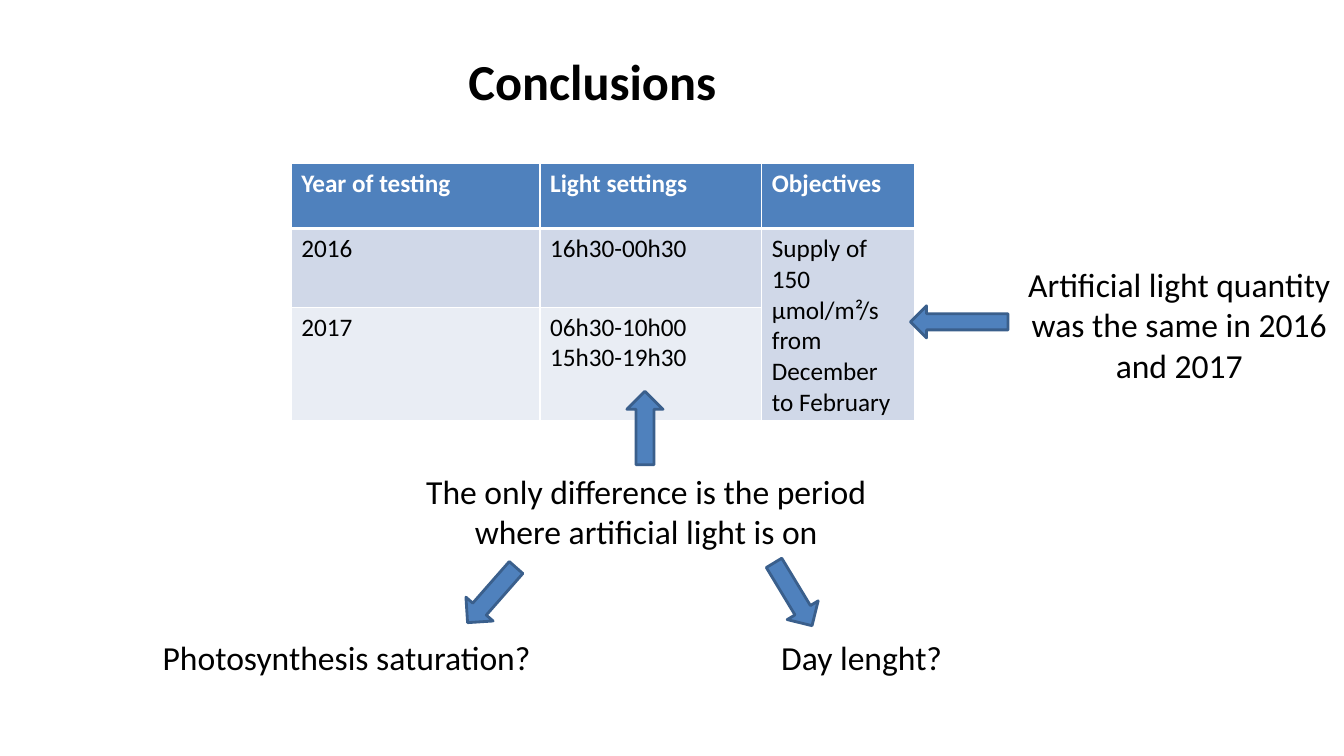
from lxml.etree import SubElement
from pptx import Presentation
from pptx.dml.color import RGBColor
from pptx.enum.shapes import MSO_SHAPE as Shape
from pptx.enum.text import MSO_ANCHOR as Anchor, MSO_AUTO_SIZE as AutoSize, PP_ALIGN as Align
from pptx.oxml.ns import qn
from pptx.util import Cm, Pt

FONT = "Calibri"
BLACK, WHITE, BLUE, NAVY = "000000", "FFFFFF", "4F81BD", "3A5F8C"
ROW_FILLS = [BLUE, "D0D8E8", "E9EDF4"]
COLUMN_WIDTHS = [6.27, 5.59, 3.86]
ROW_HEIGHTS = [1.65, 1.98, 2.36]
ROWS = [
    [["Year of testing"], ["Light settings"], ["Objectives"]],
    [["2016"], ["16h30-00h30"], ["Supply of 150 µmol/m²/s from December to February"]],
    [["2017"], ["06h30-10h00", "15h30-19h30"], []],
]
STATEMENTS = [
    ("Artificial light quantity was the same in 2016 and 2017", 25.53, 6.53, 8.38, 3.33),
    ("The only difference is the period where artificial light is on", 10.29, 11.73, 11.99, 2.31),
    ("Photosynthesis saturation?", 2.74, 15.93, 11.99, 1.27),
    ("Day lenght?", 15.72, 15.93, 11.99, 1.27),
]
ARROWS = [
    (15.8, 9.86, 0.91, 1.85, 0),
    (23.77, 6.88, 0.81, 2.46, 270),
    (11.94, 14.07, 0.91, 1.85, 221.3),
    (19.53, 14.05, 0.91, 1.85, 148.8),
]


def paint(target, color):
    """Give a fill one solid colour."""
    target.solid()
    target.fore_color.rgb = RGBColor.from_string(color)


def add_span(para, text, size, color=BLACK, bold=False):
    """Add one formatted run to a paragraph."""
    span = para.add_run()
    span.text = text
    span.font.name = FONT
    span.font.size = Pt(size)
    span.font.bold = bold
    span.font.color.rgb = RGBColor.from_string(color)


def add_text(page, text, left, top, width, height, size=24, bold=False):
    """Add a centred, wrapping text box and return its frame."""
    box = page.shapes.add_textbox(Cm(left), Cm(top), Cm(width), Cm(height))
    frame = box.text_frame
    frame.word_wrap = True
    para = frame.paragraphs[0]
    para.alignment = Align.CENTER
    add_span(para, text, size, bold=bold)
    return frame


def add_arrow(page, left, top, width, height, rotation):
    """Add a block arrow turned clockwise from pointing up."""
    arrow = page.shapes.add_shape(Shape.UP_ARROW, Cm(left), Cm(top), Cm(width), Cm(height))
    arrow.rotation = rotation
    arrow.shadow.inherit = False
    paint(arrow.fill, BLUE)
    paint(arrow.line.fill, NAVY)
    arrow.line.width = Pt(2)


def add_borders(cell, top, bottom):
    """Draw white borders around a cell, with widths in points."""
    properties = cell._tc.get_or_add_tcPr()
    for side, width in (("L", 1), ("R", 1), ("T", top), ("B", bottom)):
        line = SubElement(properties, qn(f"a:ln{side}"), w=str(Pt(width)))
        solid = SubElement(line, qn("a:solidFill"))
        SubElement(solid, qn("a:srgbClr"), val=WHITE)


def fill_cell(cell, lines, row):
    """Style a cell by its row and write its lines."""
    header = row == 0
    add_borders(cell, 3 if row == 1 else 1, 3 if header else 1)
    paint(cell.fill, ROW_FILLS[row])
    frame = cell.text_frame
    for index, text in enumerate(lines):
        para = frame.add_paragraph() if index else frame.paragraphs[0]
        add_span(para, text, 18, WHITE if header else BLACK, header)


def add_light_table(page, left, top):
    """Add the table of light settings per year."""
    frame = page.shapes.add_table(len(ROWS), len(COLUMN_WIDTHS), Cm(left), Cm(top),
                                  Cm(sum(COLUMN_WIDTHS)), Cm(sum(ROW_HEIGHTS)))
    table = frame.table
    for column, width in zip(table.columns, COLUMN_WIDTHS):
        column.width = Cm(width)
    for table_row, height in zip(table.rows, ROW_HEIGHTS):
        table_row.height = Cm(height)
    table.cell(1, 2).merge(table.cell(2, 2))
    for row, entries in enumerate(ROWS):
        for column, lines in enumerate(entries):
            fill_cell(table.cell(row, column), lines, row)


def main():
    """Build the conclusions slide."""
    deck = Presentation()
    deck.slide_width, deck.slide_height = Cm(33.87), Cm(19.05)
    page = deck.slides.add_slide(deck.slide_layouts[6])
    title = add_text(page, "Conclusions", 5.33, 0.53, 19.2, 3, size=36, bold=True)
    title.vertical_anchor = Anchor.MIDDLE
    add_light_table(page, 7.34, 4.11)
    for statement in STATEMENTS:
        add_text(page, *statement).auto_size = AutoSize.SHAPE_TO_FIT_TEXT
    for arrow in ARROWS:
        add_arrow(page, *arrow)
    deck.save("out.pptx")


if __name__ == "__main__":
    main()
